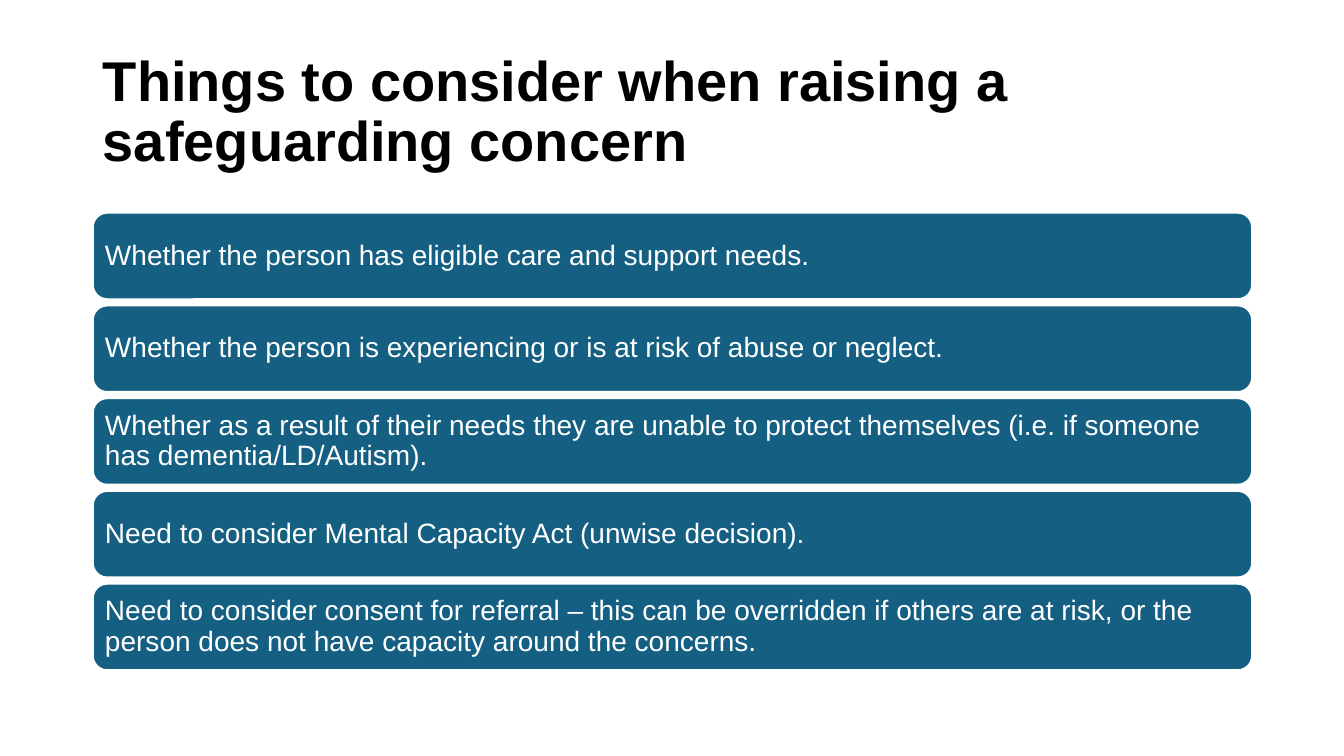
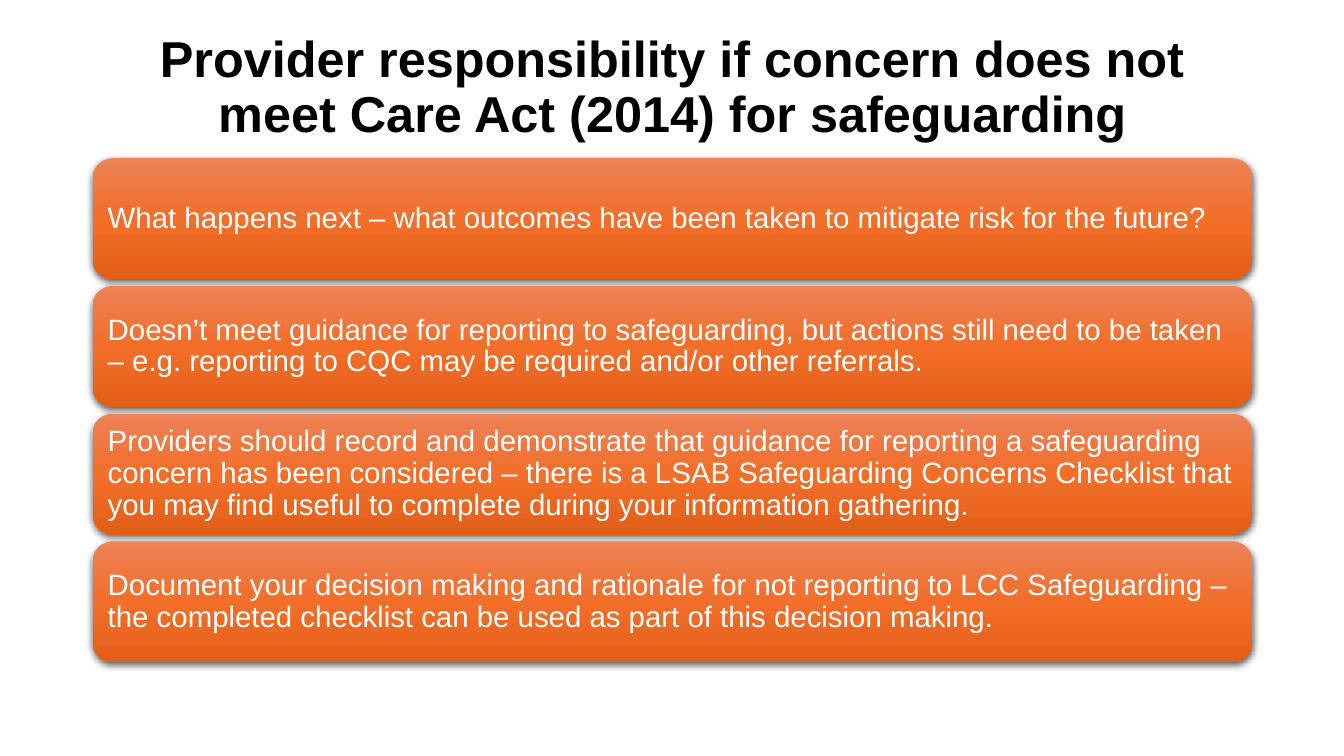
from lxml.etree import SubElement
from pptx import Presentation
from pptx.dml.color import RGBColor
from pptx.enum.shapes import MSO_SHAPE as Form
from pptx.enum.text import MSO_ANCHOR as Anchor, MSO_AUTO_SIZE as Fit, PP_ALIGN as Align
from pptx.oxml.ns import qn
from pptx.util import Inches, Pt


def rgb(code):
    return RGBColor.from_string(code)


def add(node, tag, **attrs):
    return SubElement(node, qn(tag), attrs)


class Deck:
    FONT, INK, PAPER = "Arial", "000000", "FFFFFF"
    LEFT, WIDE = 0.92, 11.5
    TITLE_ONLY = 5

    def __init__(self):
        self.show = Presentation()
        self.show.slide_width = Inches(13.33)
        self.show.slide_height = Inches(7.5)
        self.slide = None

    def label(self, frame, text, size, color, align, bold=False):
        """Set one styled paragraph in a text frame."""
        frame.word_wrap = True
        frame.auto_size = Fit.NONE
        frame.vertical_anchor = Anchor.MIDDLE
        para = frame.paragraphs[0]
        para.alignment = align
        para.line_spacing = 0.9
        run = para.add_run()
        run.text = text
        font = run.font
        font.name, font.size, font.bold = self.FONT, Pt(size), bold
        font.color.rgb = rgb(color)

    def page(self, text, size, high, align):
        """Start a slide with its title."""
        layout = self.show.slide_layouts[self.TITLE_ONLY]
        self.slide = self.show.slides.add_slide(layout)
        title = self.slide.shapes.title
        title.left, title.top = Inches(self.LEFT), Inches(0.4)
        title.width, title.height = Inches(self.WIDE), Inches(high)
        self.label(title.text_frame, text, size, self.INK, align, True)

    def bar(self, text, top, high, size, inset):
        """Add a rounded bar with left-aligned text."""
        bar = self.slide.shapes.add_shape(
            Form.ROUNDED_RECTANGLE, Inches(self.LEFT), Inches(top),
            Inches(self.WIDE), Inches(high))
        bar.shadow.inherit = False
        frame = bar.text_frame
        frame.margin_left = frame.margin_right = Inches(inset)
        frame.margin_top = frame.margin_bottom = Inches(inset)
        self.label(frame, text, size, self.PAPER, Align.LEFT)
        return bar

    def stack(self, texts, top, end, high, size, inset, paint):
        """Spread bars evenly from top to end."""
        step = (end - top - high) / (len(texts) - 1)
        for i, text in enumerate(texts):
            paint(self.bar(text, top + i * step, high, size, inset))

    def flat(self, bar):
        """Plain blue with a white outline."""
        bar.fill.solid()
        bar.fill.fore_color.rgb = rgb("156082")
        bar.line.color.rgb = rgb(self.PAPER)
        bar.line.width = Pt(1.5)

    def glow(self, bar):
        """Orange gradient with a soft shadow below."""
        bar.line.fill.background()
        bar.fill.gradient()
        bar.fill.gradient_angle = 270
        props = bar.element.spPr
        stops = props.find(qn("a:gradFill")).find(qn("a:gsLst"))
        for stop in list(stops):
            stops.remove(stop)
        for pos, code in ((0, "ED8257"), (50, "F26E29"), (100, "E25F1A")):
            stop = add(stops, "a:gs", pos=str(pos * 1000))
            add(stop, "a:srgbClr", val=code)
        shade = add(props.find(qn("a:effectLst")), "a:outerShdw",
                    blurRad=str(Pt(4.5)), dist=str(Pt(1.5)), dir="5400000",
                    algn="ctr", rotWithShape="0")
        add(add(shade, "a:srgbClr", val=self.INK), "a:alpha", val="63000")


def main():
    deck = Deck()

    # Points to weigh
    deck.page("Things to consider when raising a safeguarding concern",
              40, 1.45, Align.LEFT)
    deck.stack([
        "Whether the person has eligible care and support needs.",
        "Whether the person is experiencing or is at risk of abuse or neglect.",
        "Whether as a result of their needs they are unable to protect "
        "themselves (i.e. if someone has dementia/LD/Autism).",
        "Need to consider Mental Capacity Act (unwise decision).",
        "Need to consider consent for referral – this can be overridden if "
        "others are at risk, or the person does not have capacity around "
        "the concerns.",
    ], 2.11, 6.65, 0.86, 20, 0.08, deck.flat)

    # Provider duties
    deck.page("Provider responsibility if concern does not meet Care Act "
              "(2014) for safeguarding", 36, 0.96, Align.CENTER)
    deck.stack([
        "What happens next – what outcomes have been taken to mitigate risk "
        "for the future?",
        "Doesn’t meet guidance for reporting to safeguarding, but "
        "actions still need to be taken – e.g. reporting to CQC may be "
        "required and/or other referrals.",
        "Providers should record and demonstrate that guidance for reporting "
        "a safeguarding concern has been considered – there is a LSAB "
        "Safeguarding Concerns Checklist that you may find useful to "
        "complete during your information gathering.",
        "Document your decision making and rationale for not reporting to "
        "LCC Safeguarding – the completed checklist can be used as part of "
        "this decision making.",
    ], 1.57, 6.57, 1.2, 21, 0.09, deck.glow)

    deck.show.save("out.pptx")


if __name__ == "__main__":
    main()
